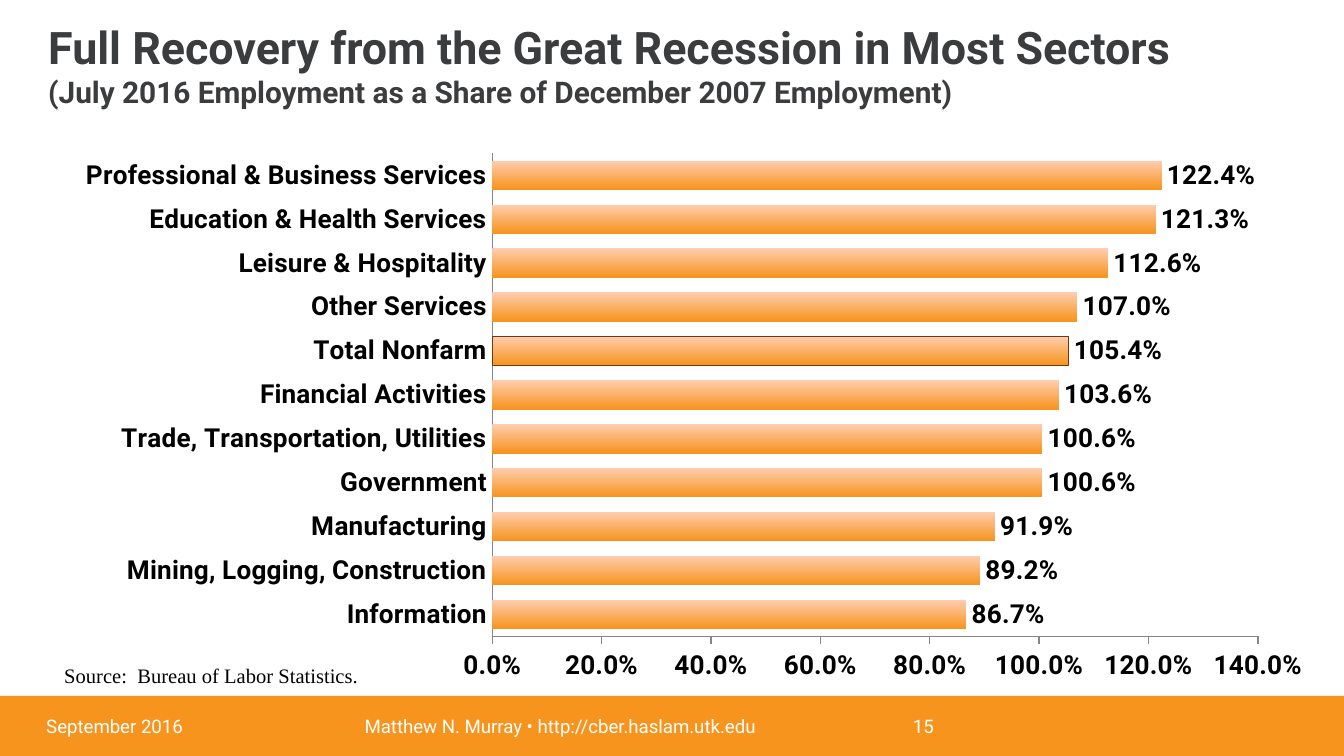
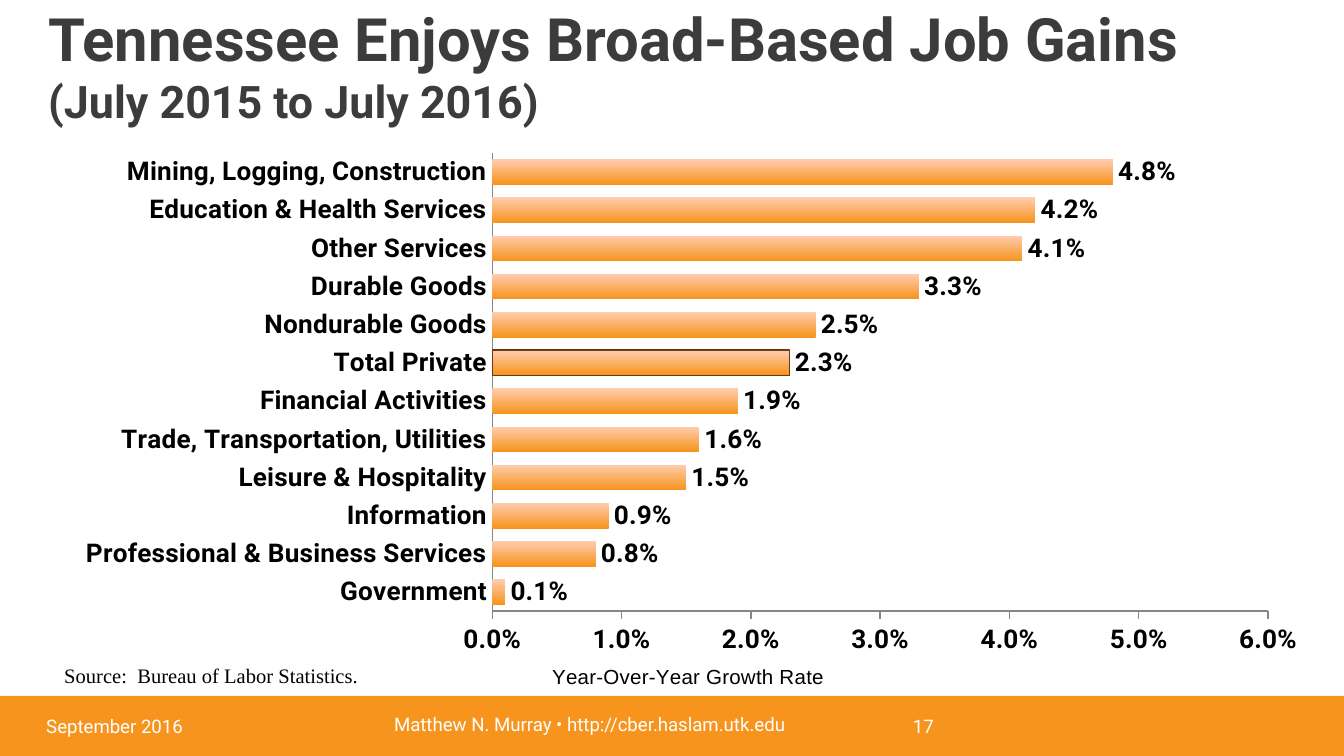
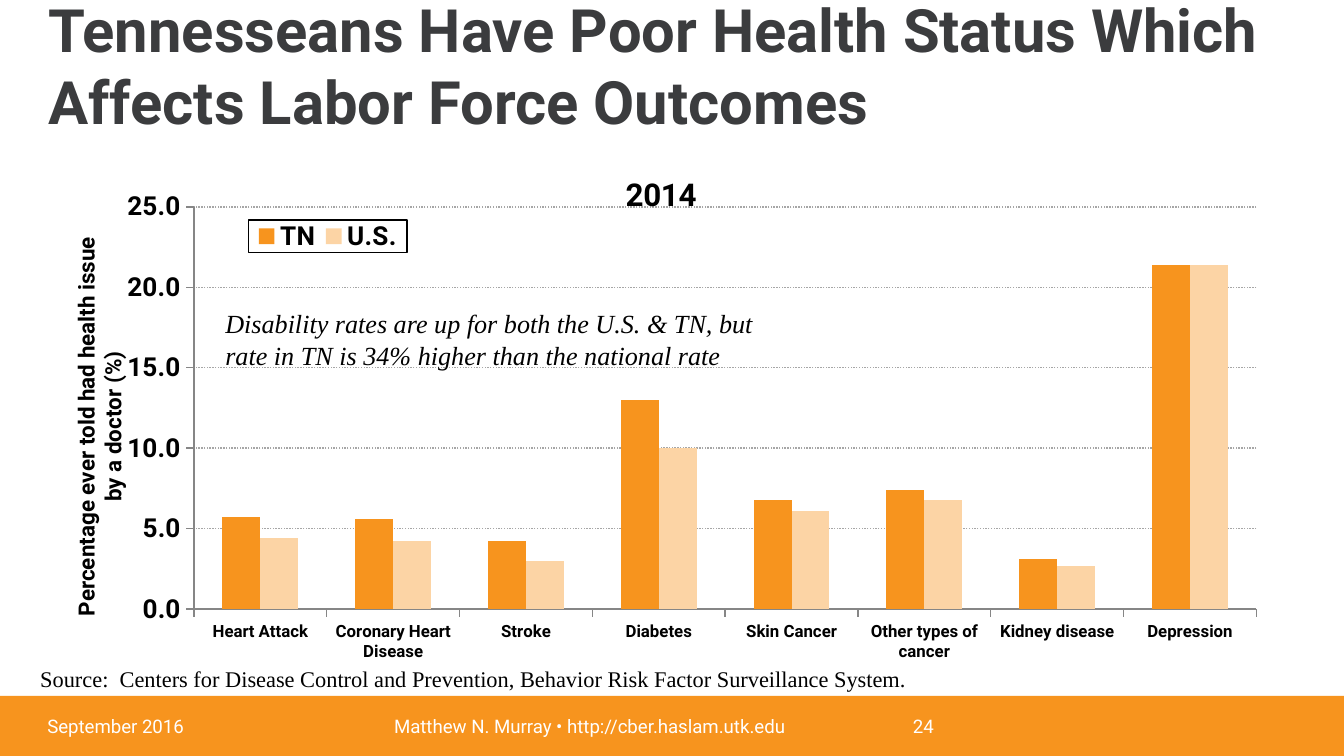
from lxml.etree import SubElement
from pptx import Presentation
from pptx.chart.data import CategoryChartData
from pptx.dml.color import RGBColor
from pptx.enum.chart import XL_CHART_TYPE, XL_LABEL_POSITION, XL_LEGEND_POSITION, XL_TICK_MARK
from pptx.enum.dml import MSO_LINE
from pptx.enum.shapes import MSO_SHAPE
from pptx.enum.text import MSO_ANCHOR, PP_ALIGN
from pptx.oxml import parse_xml
from pptx.oxml.ns import nsdecls, qn
from pptx.util import Emu, Pt

# Shared style
PX_PER_INCH = 134.4
ORANGE, PEACH, PALE = "F7941E", "FCD4A5", "FFCDB0"
INK, BLACK, WHITE = "3B3C3E", "000000", "FFFFFF"
AXIS, GRID, OUTLINE = "868686", "A6A6A6", "6B3A10"
SANS, SERIF = "Roboto", "Times New Roman"
SOURCE_BLS = "Source:  Bureau of Labor Statistics."


def px(n):
    return Emu(round(n * 914400 / PX_PER_INCH))


def rgb(code):
    return RGBColor.from_string(code)


def set_font(font, size, name=SANS, color=BLACK, bold=False, italic=False):
    font.size, font.name, font.bold, font.italic = Pt(size), name, bold, italic
    font.color.rgb = rgb(color)


def place(parent, x, y, w=None, h=None, inner=False):
    """Give a chart part a fixed place, as fractions of the chart."""
    layout = parent.find(qn("c:layout"))
    if layout is None:
        layout = parse_xml(f"<c:layout {nsdecls('c')}/>")
        before = ("c:tx", "c:legendPos")
        parent.insert(sum(len(parent.findall(qn(tag))) for tag in before), layout)
    for child in list(layout):
        layout.remove(child)
    manual = SubElement(layout, qn("c:manualLayout"))
    settings = [("layoutTarget", "inner" if inner else None),
                ("xMode", "edge"), ("yMode", "edge"),
                ("x", x), ("y", y), ("w", w), ("h", h)]
    for tag, value in settings:
        if value is not None:
            SubElement(manual, qn("c:" + tag)).set("val", str(value))


def shade_bar(fmt):
    fmt.fill.gradient()
    fmt.fill.gradient_angle = 270
    for stop, color in zip(fmt.fill.gradient_stops, (PALE, ORANGE)):
        stop.color.rgb = rgb(color)


class Deck:
    def __init__(self):
        self.prs = Presentation()
        self.prs.slide_width, self.prs.slide_height = px(1344), px(756)
        self.s = None

    def slide(self):
        self.s = self.prs.slides.add_slide(self.prs.slide_layouts[6])
        band = self.s.shapes.add_shape(MSO_SHAPE.RECTANGLE, px(0), px(696), px(1344), px(60))
        band.shadow.inherit = False
        band.fill.solid()
        band.fill.fore_color.rgb = rgb(ORANGE)
        band.line.fill.background()

    def text(self, box, lines, name=SANS, color=BLACK, align=PP_ALIGN.LEFT,
             anchor=MSO_ANCHOR.TOP, bold=False, italic=False):
        """lines holds (text, size) pairs, parted by line breaks."""
        tf = self.s.shapes.add_textbox(*map(px, box)).text_frame
        tf.word_wrap, tf.vertical_anchor = True, anchor
        p = tf.paragraphs[0]
        p.alignment = align
        for i, (words, size) in enumerate(lines):
            if i:
                p.add_line_break()
            r = p.add_run()
            r.text = words
            set_font(r.font, size, name, color, bold, italic)

    def title(self, *lines):
        self.text((35, 6, 1274, 118), lines, color=INK, bold=True, anchor=MSO_ANCHOR.MIDDLE)

    def note(self, box, words, size, italic=False):
        self.text(box, [(words, size)], SERIF, italic=italic)

    def footer(self, number, date_left=33, center=(208, 706, 763, 40)):
        parts = [((date_left, 706, 206, 40), "September 2016", PP_ALIGN.LEFT),
                 (center, "Matthew N. Murray • http://cber.haslam.utk.edu", PP_ALIGN.CENTER),
                 ((887, 706, 60, 40), str(number), PP_ALIGN.RIGHT)]
        for box, words, align in parts:
            self.text(box, [(words, 10)], color=WHITE, align=align, anchor=MSO_ANCHOR.MIDDLE)

    def chart(self, kind, box, cats, series, plot, gap, top, step, fmt, cat_size=14):
        data = CategoryChartData()
        data.categories = cats
        for name, values in series:
            data.add_series(name, values)
        chart = self.s.shapes.add_chart(kind, *map(px, box), data).chart
        set_font(chart.font, 14, bold=True)
        chart.has_title = chart.has_legend = False
        place(chart.element.find(".//" + qn("c:plotArea")), *plot, inner=True)
        chart.plots[0].gap_width = gap
        chart.plots[0].vary_by_categories = False
        for axis, size in ((chart.category_axis, cat_size), (chart.value_axis, 14)):
            set_font(axis.tick_labels.font, size, bold=True)
            axis.format.line.color.rgb = rgb(AXIS)
            axis.format.line.width = Pt(0.75)
            axis.major_tick_mark = XL_TICK_MARK.OUTSIDE
            axis.minor_tick_mark = XL_TICK_MARK.NONE
            axis.has_major_gridlines = False
        axis = chart.value_axis
        axis.minimum_scale, axis.maximum_scale, axis.major_unit = 0, top, step
        axis.tick_labels.number_format = fmt
        axis.tick_labels.number_format_is_linked = False
        return chart

    def chart_title(self, title, words, size, x, y, name=SANS, bold=True):
        r = title.text_frame.paragraphs[0].add_run()
        r.text = words
        set_font(r.font, size, name, bold=bold)
        place(title.element, x, y)

    def sector_bars(self, top_px, rows, total, plot, top, step):
        """Horizontal bars from the top row down, with the total outlined."""
        rows = rows[::-1]
        cats = [name for name, _ in rows]
        chart = self.chart(XL_CHART_TYPE.BAR_CLUSTERED, (35, top_px, 1274, 543), cats,
                           [("Series 1", [value for _, value in rows])],
                           plot, 52, top, step, "0.0%")
        chart.category_axis.major_tick_mark = XL_TICK_MARK.NONE
        series = chart.plots[0].series[0]
        shade_bar(series.format)
        point = series.points[cats.index(total)].format
        shade_bar(point)
        point.line.color.rgb = rgb(OUTLINE)
        point.line.width = Pt(0.75)
        labels = series.data_labels
        labels.show_value = True
        labels.number_format, labels.number_format_is_linked = "0.0%", False
        labels.position = XL_LABEL_POSITION.OUTSIDE_END
        set_font(labels.font, 14, bold=True)
        return chart


def recovery_slide(deck):
    deck.slide()
    deck.title(("Full Recovery from the Great Recession in Most Sectors", 24),
               ("(July 2016 Employment as a Share of December 2007 Employment)", 16))
    deck.sector_bars(144, [
        ("Professional & Business Services", 1.224),
        ("Education & Health Services", 1.213),
        ("Leisure & Hospitality", 1.126),
        ("Other Services", 1.07),
        ("Total Nonfarm", 1.054),
        ("Financial Activities", 1.036),
        ("Trade, Transportation, Utilities", 1.006),
        ("Government", 1.006),
        ("Manufacturing", 0.919),
        ("Mining, Logging, Construction", 0.892),
        ("Information", 0.867),
    ], "Total Nonfarm", (0.359, 0.017, 0.601, 0.89), 1.4, 0.2)
    deck.note((51, 656, 400, 39), SOURCE_BLS, 11)
    deck.footer(15, center=(238, 706, 644, 40))


def job_gains_slide(deck):
    deck.slide()
    deck.title(("Tennessee Enjoys Broad-Based Job Gains", 32), ("(July 2015 to July 2016)", 24))
    chart = deck.sector_bars(152, [
        ("Mining, Logging, Construction", 0.048),
        ("Education & Health Services", 0.042),
        ("Other Services", 0.041),
        ("Durable Goods", 0.033),
        ("Nondurable Goods", 0.025),
        ("Total Private", 0.023),
        ("Financial Activities", 0.019),
        ("Trade, Transportation, Utilities", 0.016),
        ("Leisure & Hospitality", 0.015),
        ("Information", 0.009),
        ("Professional & Business Services", 0.008),
        ("Government", 0.001),
    ], "Total Private", (0.359, 0, 0.609, 0.855), 0.06, 0.01)
    deck.chart_title(chart.value_axis.axis_title, "Year-Over-Year Growth Rate", 11,
                     0.403, 0.945, "Arial", bold=False)
    deck.note((51, 656, 400, 39), SOURCE_BLS, 11)
    deck.footer(17, center=(208, 704, 763, 40))


def health_slide(deck):
    deck.slide()
    deck.title(("Tennesseans Have Poor Health Status Which Affects Labor Force Outcomes", 32))
    chart = deck.chart(
        XL_CHART_TYPE.COLUMN_CLUSTERED, (67, 168, 1210, 499),
        ["Heart Attack", "Coronary Heart Disease", "Stroke", "Diabetes", "Skin Cancer",
         "Other types of cancer", "Kidney disease", "Depression"],
        [("TN", [5.7, 5.6, 4.2, 13, 6.8, 7.4, 3.1, 21.4]),
         ("U.S.", [4.4, 4.2, 3, 10, 6.1, 6.8, 2.7, 21.4])],
        (0.105, 0.078, 0.878, 0.806), 150, 25, 5, "#,##0.0", cat_size=9)
    for series, color in zip(chart.plots[0].series, (ORANGE, PEACH)):
        series.format.fill.solid()
        series.format.fill.fore_color.rgb = rgb(color)

    # Gridlines and titles
    line = chart.value_axis.major_gridlines.format.line
    line.color.rgb, line.width, line.dash_style = rgb(GRID), Pt(0.75), MSO_LINE.ROUND_DOT
    deck.chart_title(chart.chart_title, "2014", 16.8, 0.457, 0.002)
    chart.chart_title.element.find(qn("c:overlay")).set("val", "1")
    side = chart.value_axis.axis_title
    deck.chart_title(side, "Percentage ever told had health issue by a doctor (%)", 12, 0, 0.13)
    body = side.element.find(".//" + qn("a:bodyPr"))
    body.set("rot", "-5400000")
    body.set("vert", "horz")

    # Framed legend
    chart.has_legend = True
    chart.legend.position = XL_LEGEND_POSITION.TOP
    chart.legend.include_in_layout = False
    set_font(chart.legend.font, 14, bold=True)
    legend = chart.element.find(".//" + qn("c:legend"))
    place(legend, 0.15, 0.104, 0.131, 0.066)
    legend.find(qn("c:overlay")).addnext(parse_xml(
        f'<c:spPr {nsdecls("c", "a")}><a:ln w="9525"><a:solidFill>'
        f'<a:srgbClr val="{BLACK}"/></a:solidFill></a:ln></c:spPr>'))

    deck.note((27, 659, 1016, 40), "Source:  Centers for Disease Control and Prevention, "
              "Behavior Risk Factor Surveillance System.", 12)
    deck.note((212, 301, 571, 77), "Disability rates are up for both the U.S. & TN, "
              "but rate in TN is 34% higher than the national rate", 14, italic=True)
    deck.footer(24, date_left=34)


def main():
    deck = Deck()
    recovery_slide(deck)
    job_gains_slide(deck)
    health_slide(deck)
    deck.prs.save("out.pptx")


if __name__ == "__main__":
    main()
